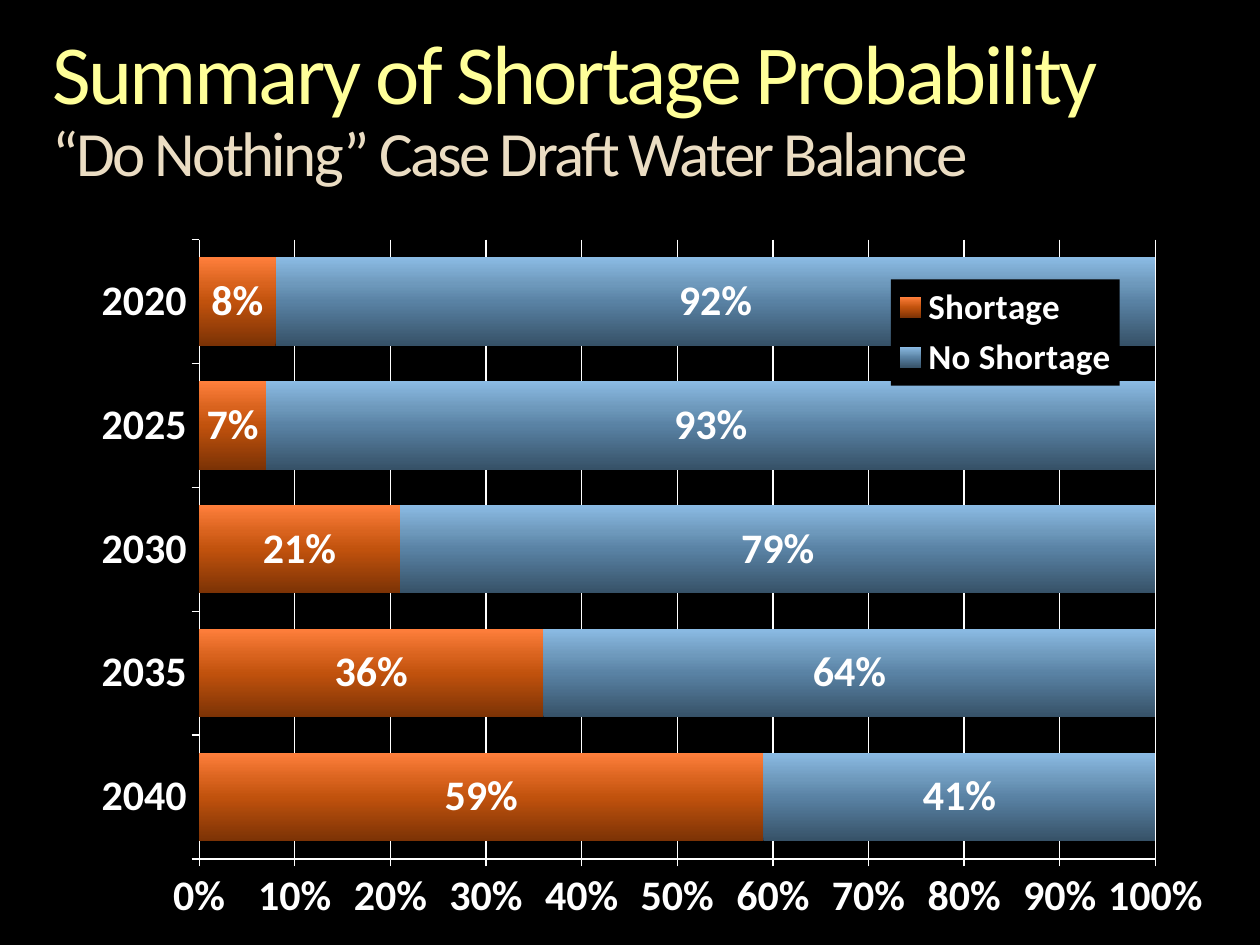
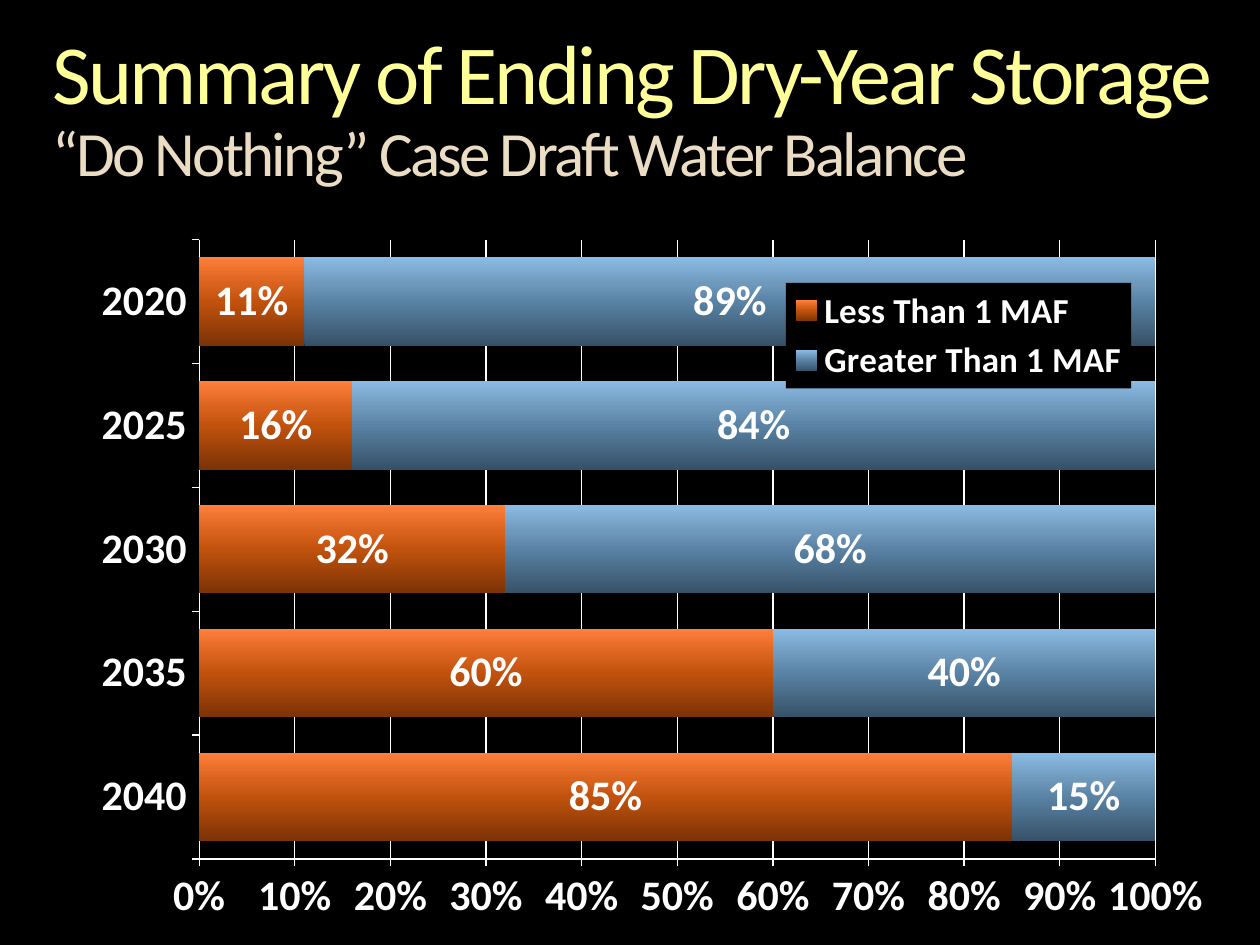
from dataclasses import dataclass

from lxml.etree import QName
from pptx import Presentation
from pptx.chart.data import CategoryChartData
from pptx.dml.color import RGBColor
from pptx.enum.chart import XL_CHART_TYPE as ChartType
from pptx.enum.chart import XL_LABEL_POSITION as LabelPosition
from pptx.enum.chart import XL_LEGEND_POSITION as LegendPosition
from pptx.enum.chart import XL_TICK_MARK as TickMark
from pptx.enum.text import MSO_ANCHOR as Anchor
from pptx.oxml import parse_xml
from pptx.oxml.ns import nsdecls, qn
from pptx.util import Pt


@dataclass(frozen=True)
class Gradient:
    stops: tuple[tuple[int, str], ...]
    angle: int


@dataclass(frozen=True)
class Frame:
    left: float
    top: float
    width: float
    height: float


@dataclass(frozen=True)
class Theme:
    font: str = "Calibri"
    background: str = "000000"
    foreground: str = "FFFFFF"
    subtitle: str = "EBDDC3"
    title: Gradient = Gradient(((0, "FFFFB9"), (36, "FFFF99"), (86, "F6AE1E")), 90)
    orange: Gradient = Gradient(
        ((0, "7B3205"), (50, "C1520D"), (70, "D9631E"), (100, "FF7F3C")), 270)
    blue: Gradient = Gradient(
        ((0, "365167"), (50, "5982A4"), (70, "6E99BC"), (100, "8BBBE4")), 270)
    title_size: int = 48
    subtitle_size: int = 36
    axis_size: int = 24
    legend_size: int = 20
    chart_size: int = 18
    title_spacing: float = -1.5


@dataclass(frozen=True)
class Series:
    name: str
    values: tuple[float, ...]


@dataclass(frozen=True)
class BalanceSlide:
    title: str
    series: tuple[Series, Series]
    legend: Frame


THEME = Theme()
SUBTITLE = "“Do Nothing” Case Draft Water Balance"
YEARS = ("2040", "2035", "2030", "2025", "2020")
TITLE_FRAME = Frame(30, 18, 678, 92)
CHART_FRAME = Frame(30, 126, 660, 405)
PLOT = Frame(0.127, 0.027, 0.828, 0.874)

SLIDES = (
    BalanceSlide(
        "Summary of Shortage Probability",
        (Series("Shortage", (0.59, 0.36, 0.21, 0.07, 0.08)),
         Series("No Shortage", (0.41, 0.64, 0.79, 0.93, 0.92))),
        Frame(0.726, 0.083, 0.198, 0.15),
    ),
    BalanceSlide(
        "Summary of Ending Dry-Year Storage",
        (Series("Less Than 1 MAF", (0.85, 0.6, 0.32, 0.16, 0.11)),
         Series("Greater Than 1 MAF", (0.15, 0.4, 0.68, 0.84, 0.89))),
        Frame(0.635, 0.088, 0.299, 0.149),
    ),
)


def points(frame: Frame) -> tuple[Pt, ...]:
    return Pt(frame.left), Pt(frame.top), Pt(frame.width), Pt(frame.height)


def apply_gradient(fill, properties, gradient: Gradient) -> None:
    fill.solid()
    fill.fore_color.rgb = RGBColor.from_string(gradient.stops[0][1])
    stops = "".join(
        f'<a:gs pos="{position * 1000}"><a:srgbClr val="{color}"/></a:gs>'
        for position, color in gradient.stops)
    element = parse_xml(
        f'<a:gradFill {nsdecls("a")} rotWithShape="1"><a:gsLst>{stops}</a:gsLst>'
        f'<a:lin ang="{gradient.angle * 60000}" scaled="0"/></a:gradFill>')
    properties.replace(properties.find(qn("a:solidFill")), element)


def manual_layout(frame: Frame, inner: bool = False):
    target = '<c:layoutTarget val="inner"/>' if inner else ""
    return parse_xml(
        f'<c:layout {nsdecls("c")}><c:manualLayout>{target}'
        '<c:xMode val="edge"/><c:yMode val="edge"/>'
        f'<c:x val="{frame.left}"/><c:y val="{frame.top}"/>'
        f'<c:w val="{frame.width}"/><c:h val="{frame.height}"/>'
        '</c:manualLayout></c:layout>')


def area_fill(opacity: int):
    return parse_xml(
        f'<c:spPr {nsdecls("c", "a")}><a:solidFill><a:srgbClr val="{THEME.background}">'
        f'<a:alpha val="{opacity * 1000}"/></a:srgbClr></a:solidFill></c:spPr>')


def remove_layout(element) -> None:
    for child in list(element):
        if QName(child).localname == "layout":
            element.remove(child)


def style_font(font, size: int, bold: bool = True) -> None:
    font.name = THEME.font
    font.size = Pt(size)
    font.bold = bold
    font.color.rgb = RGBColor.from_string(THEME.foreground)


def style_line(line) -> None:
    line.color.rgb = RGBColor.from_string(THEME.foreground)
    line.width = Pt(0.75)


def add_title_run(paragraph, text: str, size: int):
    run = paragraph.add_run()
    run.text = text
    run.font.name = THEME.font
    run.font.size = Pt(size)
    run.font.bold = False
    run._r.get_or_add_rPr().set("spc", str(int(THEME.title_spacing * 100)))
    return run


def add_title(slide, title: str) -> None:
    text_frame = slide.shapes.add_textbox(*points(TITLE_FRAME)).text_frame
    text_frame.word_wrap = True
    text_frame.vertical_anchor = Anchor.TOP
    text_frame.margin_left = text_frame.margin_right = Pt(0)
    text_frame.margin_top = text_frame.margin_bottom = Pt(0)
    paragraph = text_frame.paragraphs[0]
    paragraph.line_spacing = 0.9
    heading = add_title_run(paragraph, title, THEME.title_size)
    apply_gradient(heading.font.fill, heading._r.get_or_add_rPr(), THEME.title)
    paragraph.add_line_break()
    subtitle = add_title_run(paragraph, SUBTITLE, THEME.subtitle_size)
    subtitle.font.color.rgb = RGBColor.from_string(THEME.subtitle)


def style_axes(chart) -> None:
    for axis in (chart.category_axis, chart.value_axis):
        axis.major_tick_mark = TickMark.OUTSIDE
        axis.minor_tick_mark = TickMark.NONE
        style_line(axis.format.line)
        style_font(axis.tick_labels.font, THEME.axis_size)
    chart.category_axis.has_major_gridlines = False
    value_axis = chart.value_axis
    value_axis.minimum_scale = 0
    value_axis.maximum_scale = 1
    value_axis.major_unit = 0.1
    value_axis.has_major_gridlines = True
    style_line(value_axis.major_gridlines.format.line)
    value_axis.tick_labels.number_format = "0%"
    value_axis.tick_labels.number_format_is_linked = False


def style_bars(plot) -> None:
    plot.gap_width = 40
    plot.overlap = 100
    plot.vary_by_categories = False
    for series, gradient in zip(plot.series, (THEME.orange, THEME.blue)):
        series.invert_if_negative = False
        apply_gradient(series.format.fill, series._element.get_or_add_spPr(), gradient)
        labels = series.data_labels
        labels.show_value = True
        labels.number_format = "0%"
        labels.number_format_is_linked = False
        labels.position = LabelPosition.CENTER
        style_font(labels.font, THEME.axis_size)


def style_legend(chart, frame: Frame) -> None:
    chart.has_legend = True
    legend = chart.legend
    legend.position = LegendPosition.RIGHT
    legend.include_in_layout = False
    style_font(legend.font, THEME.legend_size)
    element = legend._element
    remove_layout(element)
    element.find(qn("c:legendPos")).addnext(manual_layout(frame))
    element.find(qn("c:overlay")).addnext(area_fill(100))


def add_balance_chart(slide, content: BalanceSlide) -> None:
    data = CategoryChartData(number_format="0%")
    data.categories = YEARS
    for series in content.series:
        data.add_series(series.name, series.values)
    chart = slide.shapes.add_chart(
        ChartType.BAR_STACKED, *points(CHART_FRAME), data).chart
    chart.has_title = False
    style_font(chart.font, THEME.chart_size, bold=False)
    style_axes(chart)
    style_bars(chart.plots[0])
    style_legend(chart, content.legend)
    plot_area = chart._chartSpace.chart.plotArea
    remove_layout(plot_area)
    plot_area.insert(0, manual_layout(PLOT, inner=True))
    plot_area.append(area_fill(30))


def main() -> None:
    presentation = Presentation()
    presentation.slide_width = Pt(720)
    presentation.slide_height = Pt(540)
    for content in SLIDES:
        slide = presentation.slides.add_slide(presentation.slide_layouts[6])
        slide.background.fill.solid()
        slide.background.fill.fore_color.rgb = RGBColor.from_string(THEME.background)
        add_title(slide, content.title)
        add_balance_chart(slide, content)
    presentation.save("out.pptx")


if __name__ == "__main__":
    main()
